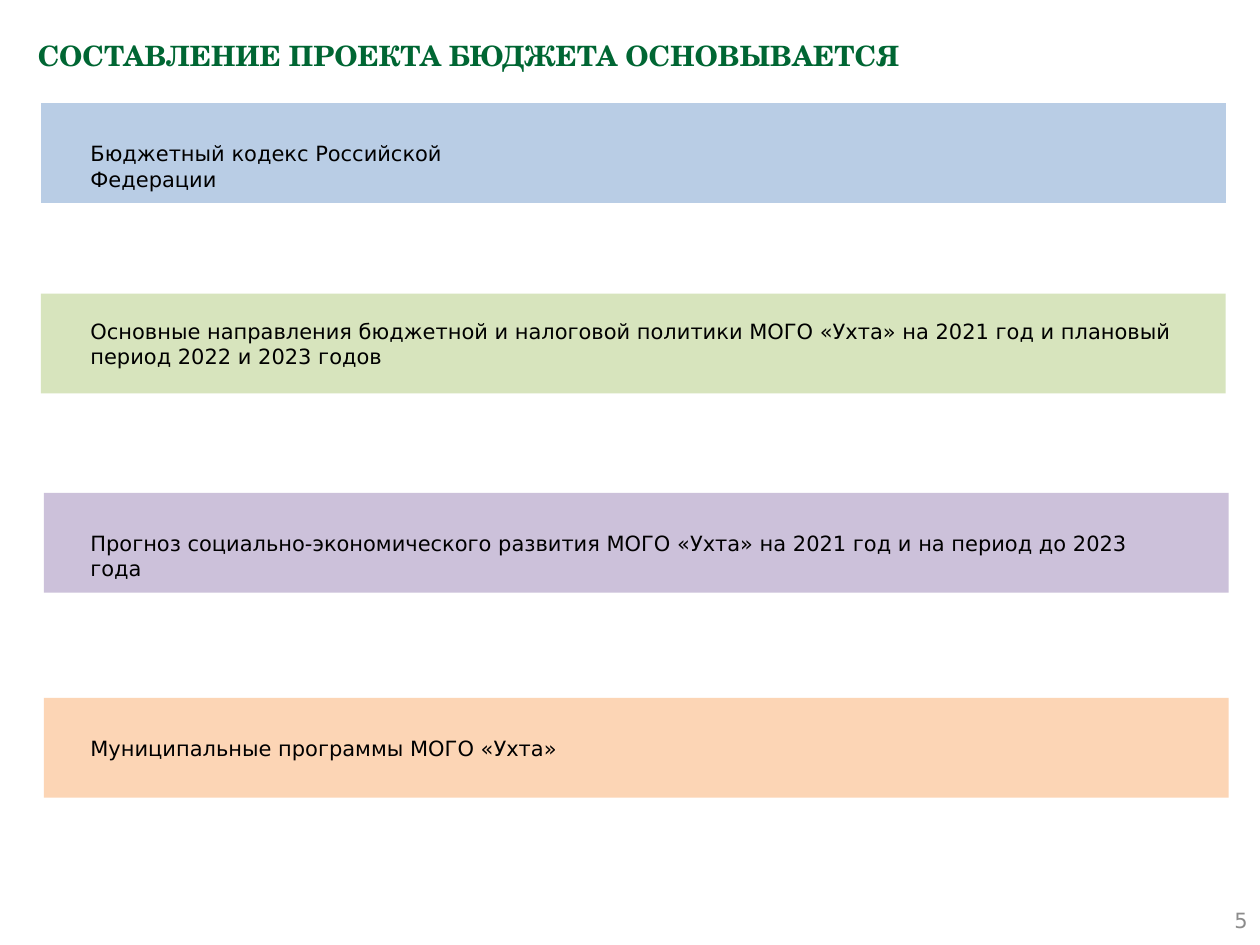
from pptx import Presentation
from pptx.dml.color import RGBColor
from pptx.enum import shapes, text
from pptx.util import Pt

TITLE = "СОСТАВЛЕНИЕ ПРОЕКТА БЮДЖЕТА ОСНОВЫВАЕТСЯ"
PAGE_NUMBER = "5"

# wording, fill, bar left, bar top, text offset below bar top, text width, text height
BASES = [
    ("Бюджетный кодекс Российской Федерации",
     "B9CDE5", 23.5, 59, 18, 286, 22),
    ("Основные направления бюджетной и налоговой политики МОГО «Ухта» "
     "на 2021 год и плановый период 2022 и 2023 годов",
     "D7E4BD", 23.3, 167.8, 10.8, 634, 36),
    ("Прогноз социально-экономического развития МОГО «Ухта» "
     "на 2021 год и на период до 2023 года",
     "CCC1DA", 25, 281.6, 18, 634, 22),
    ("Муниципальные программы МОГО «Ухта»",
     "FCD5B5", 25, 398.8, 18, 657, 22),
]
BAR_WIDTH, BAR_HEIGHT = 677, 57
TEXT_LEFT = 44.6

BODY_FONT = {"name": "DejaVu Sans", "size": Pt(12), "bold": False}
TITLE_FONT = {"name": "TeX Gyre Schola", "size": Pt(16), "bold": True}


def color(hex_value):
    return RGBColor.from_string(hex_value)


def write(shape, wording, font, hex_value, align=text.PP_ALIGN.LEFT,
          anchor=text.MSO_ANCHOR.TOP):
    frame = shape.text_frame
    frame.word_wrap = True
    frame.auto_size = text.MSO_AUTO_SIZE.NONE
    frame.vertical_anchor = anchor
    paragraph = frame.paragraphs[0]
    paragraph.alignment = align
    run = paragraph.add_run()
    run.text = wording
    for name, value in font.items():
        setattr(run.font, name, value)
    run.font.color.rgb = color(hex_value)
    return paragraph


def add_text(slide, box, *args, **kwargs):
    write(slide.shapes.add_textbox(*map(Pt, box)), *args, **kwargs)


def add_bar(slide, left, top, fill):
    bar = slide.shapes.add_shape(shapes.MSO_SHAPE.PENTAGON, Pt(left), Pt(top),
                                 Pt(BAR_WIDTH), Pt(BAR_HEIGHT))
    bar.adjustments[0] = 0
    bar.shadow.inherit = False
    bar.fill.solid()
    bar.fill.fore_color.rgb = color(fill)
    bar.line.fill.background()


def main():
    presentation = Presentation()
    presentation.slide_width, presentation.slide_height = Pt(720), Pt(540)
    slide = presentation.slides.add_slide(presentation.slide_layouts[5])

    title = slide.shapes.title
    title.left, title.top, title.width, title.height = map(Pt, (14.4, 14.4, 692, 57))
    write(title, TITLE, TITLE_FONT, "006633").line_spacing = 1.2

    for wording, fill, left, top, offset, width, height in BASES:
        add_bar(slide, left, top, fill)
        add_text(slide, (TEXT_LEFT, top + offset, width, height),
                 wording, BODY_FONT, "000000")

    add_text(slide, (552, 511.2, 168, 28.8), PAGE_NUMBER, BODY_FONT, "8C8C8C",
             align=text.PP_ALIGN.RIGHT, anchor=text.MSO_ANCHOR.MIDDLE)
    presentation.save("out.pptx")


if __name__ == "__main__":
    main()
